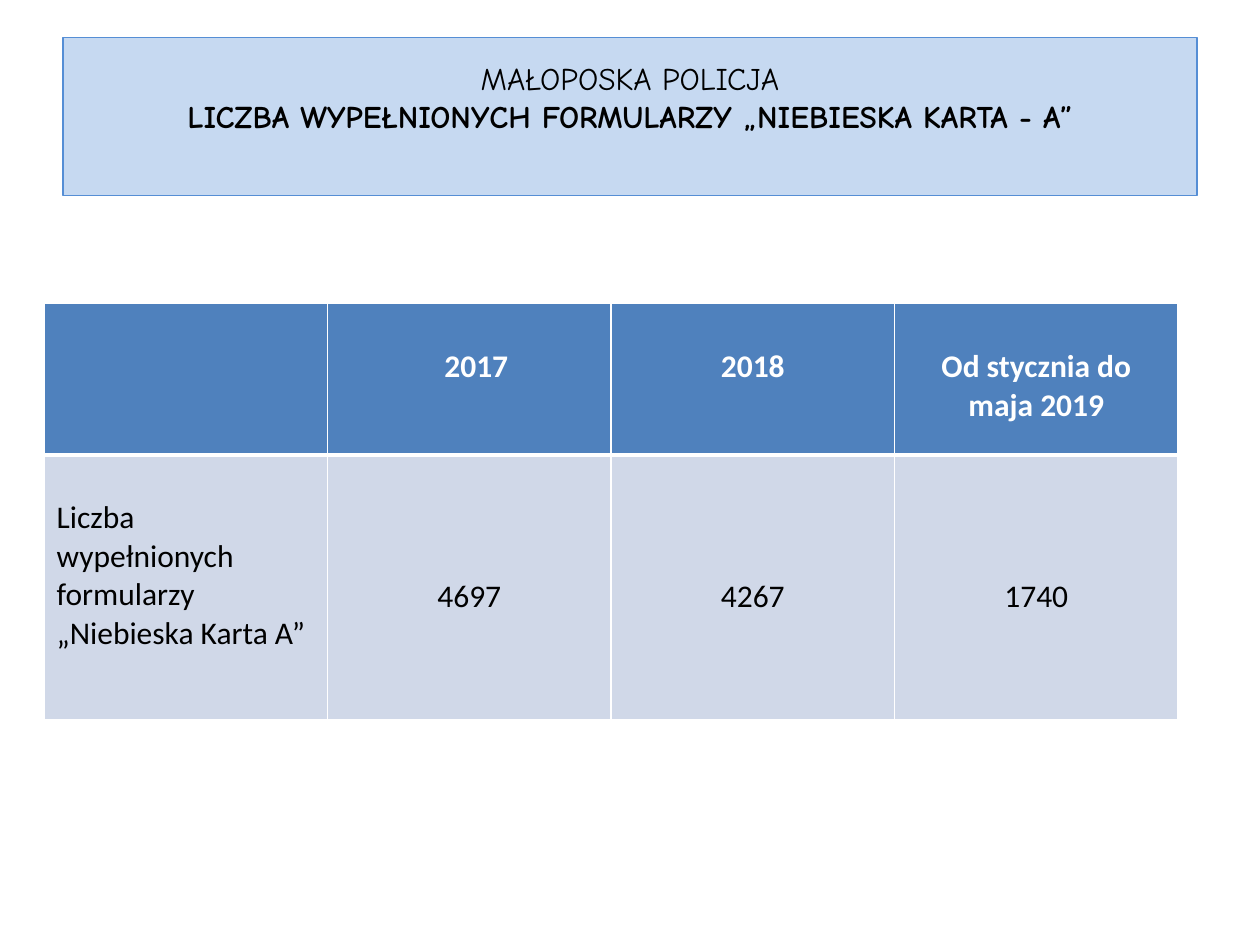
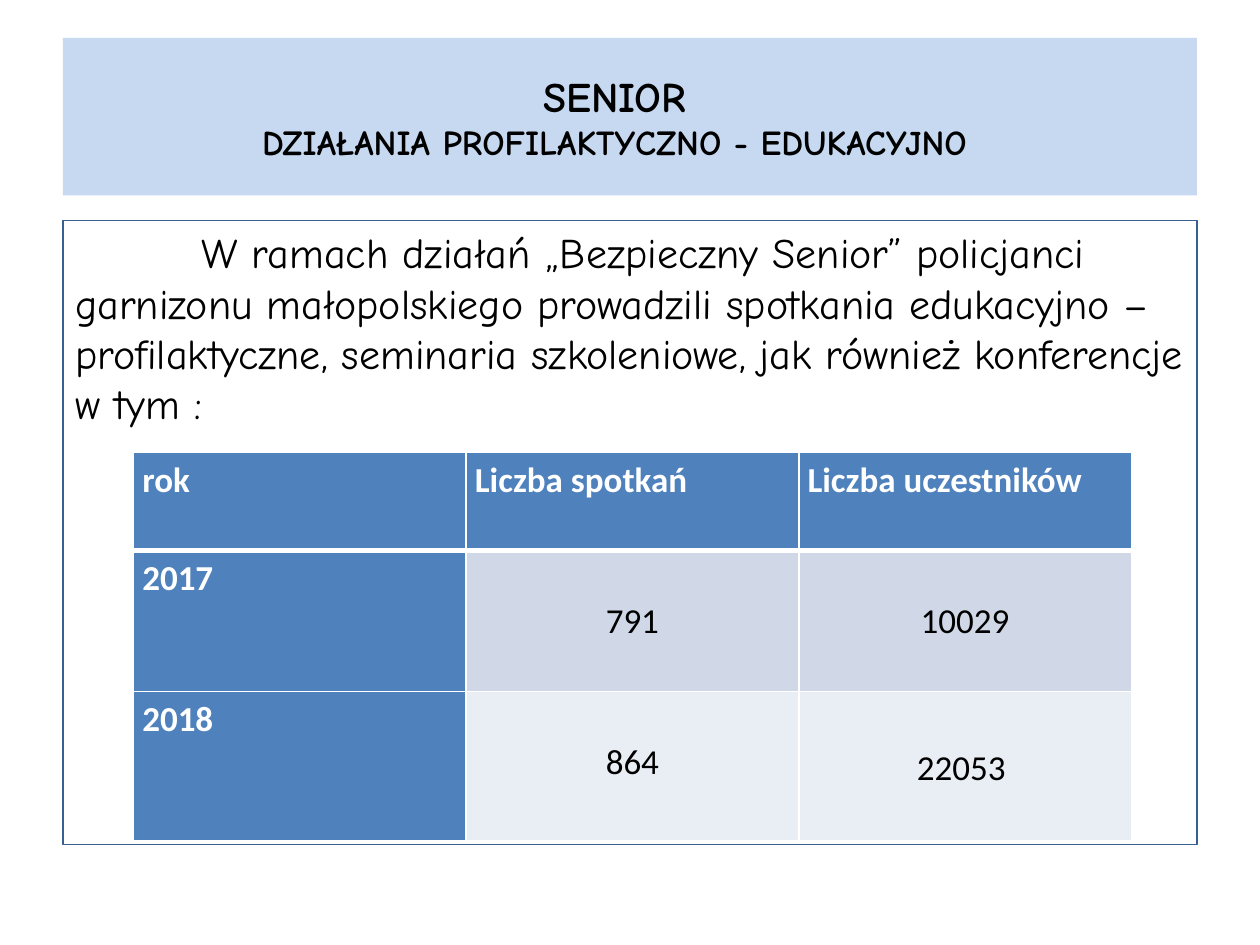
from lxml.etree import SubElement
from pptx import Presentation
from pptx.dml.color import RGBColor
from pptx.enum.shapes import MSO_SHAPE as Shape
from pptx.enum.text import MSO_ANCHOR as Anchor, PP_ALIGN as Align
from pptx.oxml.ns import qn
from pptx.util import Emu, Pt

SCALE = 9144
COLORS = {
    "black": "000000",
    "white": "FFFFFF",
    "title": "C6D9F1",
    "title_line": "558ED5",
    "body_line": "376092",
    "header": "4F81BD",
    "band_dark": "D0D8E8",
    "band_light": "E9EDF4",
}
TITLE_FONT, TABLE_FONT = "Comic Neue", "Calibri"
FRAME_LEFT, FRAME_WIDTH = 50, 900


def px(length):
    return Emu(length * SCALE)


def color(name):
    return RGBColor.from_string(COLORS[name])


class Deck:
    """Presentation style and the slide being built."""

    def __init__(self, width, height):
        self.presentation = Presentation()
        self.presentation.slide_width = px(width)
        self.presentation.slide_height = px(height)
        self.slide = None

    def new_slide(self):
        self.slide = self.presentation.slides.add_slide(self.presentation.slide_layouts[6])

    def format(self, paragraph, font, size, ink="black", bold=False, align=Align.LEFT):
        paragraph.alignment = align
        for run in paragraph.runs:
            run.font.name = font
            run.font.size = Pt(size)
            run.font.bold = bold
            run.font.color.rgb = color(ink)

    def frame(self, top, height, text, fill=None, line=None, anchor=Anchor.TOP):
        shape = self.slide.shapes.add_shape(
            Shape.RECTANGLE, px(FRAME_LEFT), px(top), px(FRAME_WIDTH), px(height))
        shape.shadow.inherit = False
        if fill:
            shape.fill.solid()
            shape.fill.fore_color.rgb = color(fill)
        else:
            shape.fill.background()
        if line:
            shape.line.color.rgb = color(line)
            shape.line.width = Pt(0.75)
        else:
            shape.line.fill.background()
        text_frame = shape.text_frame
        text_frame.word_wrap = True
        text_frame.vertical_anchor = anchor
        text_frame.text = text
        return text_frame

    def title(self, lines, line=None, bottom=5):
        text = "\n".join(text for text, *_ in lines)
        text_frame = self.frame(30, 125, text, "title", line, Anchor.MIDDLE)
        text_frame.margin_bottom = px(bottom)
        for paragraph, (_, size, bold) in zip(text_frame.paragraphs, lines):
            self.format(paragraph, TITLE_FONT, size, bold=bold, align=Align.CENTER)
        return text_frame

    def body(self, text, size, indent):
        text_frame = self.frame(175, 495, text, line="body_line")
        paragraph = text_frame.paragraphs[0]
        self.format(paragraph, TITLE_FONT, size)
        properties = paragraph._p.get_or_add_pPr()
        properties.set("marL", "0")
        properties.set("indent", str(px(indent)))

    def table(self, left, top, column_width, row_heights, rows):
        table = self.slide.shapes.add_table(
            len(rows), len(rows[0]), px(left), px(top),
            px(column_width * len(rows[0])), px(sum(row_heights))).table
        for column in table.columns:
            column.width = px(column_width)
        for row, height in zip(table.rows, row_heights):
            row.height = px(height)
        return table

    def borders(self, cell, is_header):
        widths = {"a:lnL": 1, "a:lnR": 1}
        if is_header:
            widths["a:lnT"] = 1
        widths["a:lnB"] = 3 if is_header else 1
        for tag, width in widths.items():
            line = SubElement(cell._tc.get_or_add_tcPr(), qn(tag), w=str(Pt(width)))
            fill = SubElement(line, qn("a:solidFill"))
            SubElement(fill, qn("a:srgbClr"), val=COLORS["white"])

    def cell(self, cell, text, size, fill, top, side, shift=0, bottom=0,
             is_header=False, align=Align.CENTER, spacing=None):
        self.borders(cell, is_header)
        cell.fill.solid()
        cell.fill.fore_color.rgb = color(fill)
        cell.margin_top, cell.margin_bottom = px(top), px(bottom)
        cell.margin_left, cell.margin_right = px(side + shift), px(side)
        cell.text_frame.text = text
        paragraph = cell.text_frame.paragraphs[0]
        if spacing:
            paragraph.line_spacing = spacing
        on_header = fill == "header"
        self.format(paragraph, TABLE_FONT, size, "white" if on_header else "black",
                    on_header, align)


def forms_slide(deck):
    deck.new_slide()
    deck.title([
        ("MAŁOPOSKA POLICJA", 18, False),
        ("LICZBA WYPEŁNIONYCH FORMULARZY „NIEBIESKA KARTA - A”", 18, True),
    ], line="title_line", bottom=36)
    rows = [
        ["", "2017", "2018", "Od stycznia do maja 2019"],
        ["Liczba wypełnionych formularzy „Niebieska Karta A”", "4697", "4267", "1740"],
    ]
    table = deck.table(35, 241, 225, [120, 210], rows)
    for i, row in enumerate(rows):
        for j, text in enumerate(row):
            is_label = j == 0
            deck.cell(table.cell(i, j), text, 18, "band_dark" if i else "header",
                      top=97 if i and not is_label else 35, side=10,
                      shift=11 if text == "2017" else 0, bottom=5, is_header=i == 0,
                      align=Align.LEFT if is_label else Align.CENTER)


def senior_slide(deck):
    deck.new_slide()
    text_frame = deck.title([
        ("SENIOR", 24, True),
        ("DZIAŁANIA PROFILAKTYCZNO - EDUKACYJNO", 20, True),
    ])
    text_frame.paragraphs[0]._p.get_or_add_pPr().set("marR", str(px(24)))
    deck.body("W ramach działań „Bezpieczny Senior” policjanci garnizonu małopolskiego "
              "prowadzili spotkania edukacyjno – profilaktyczne, seminaria szkoleniowe, "
              "jak również konferencje w tym :", 24, indent=100)
    rows = [
        ["rok", "Liczba spotkań", "Liczba uczestników"],
        ["2017", "791", "10029"],
        ["2018", "864", "22053"],
    ]
    bands = ["header", "band_dark", "band_light"]
    table = deck.table(106, 359, 264, [78, 112, 118], rows)
    for i, row in enumerate(rows):
        for j, text in enumerate(row):
            is_value = i > 0 and j > 0
            is_last = i == j == 2
            top = (39 if is_last else 34) if is_value else 0
            deck.cell(table.cell(i, j), text, 20, bands[i] if is_value else "header",
                      top=top, side=7, shift=-6 if is_last else 0, is_header=i == 0,
                      align=Align.CENTER if is_value else Align.LEFT, spacing=1.15)


def main():
    deck = Deck(1000, 750)
    forms_slide(deck)
    senior_slide(deck)
    deck.presentation.save("out.pptx")


if __name__ == "__main__":
    main()
